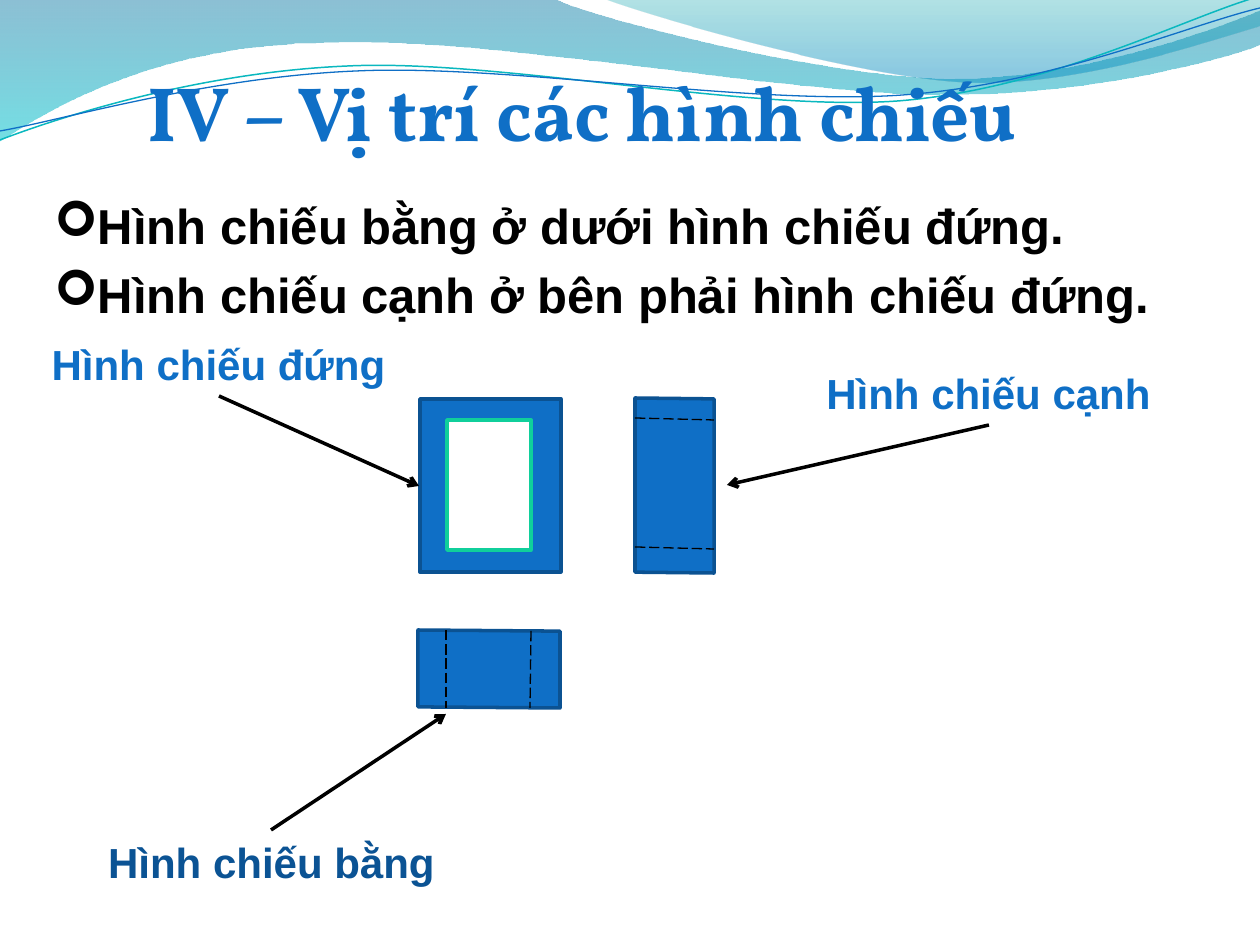
from dataclasses import dataclass
from math import cos, radians, sin

from lxml.etree import SubElement
from pptx import Presentation
from pptx.dml.color import RGBColor
from pptx.enum.dml import MSO_LINE
from pptx.enum.shapes import MSO_CONNECTOR, MSO_SHAPE
from pptx.enum.text import PP_ALIGN
from pptx.oxml.ns import qn
from pptx.util import Emu, Pt

EMU_PER_PX = 914400 / 126
WAVE_TILT = -2.7


@dataclass(frozen=True)
class Theme:
    blue: str = "0F6FC6"
    dark_blue: str = "0B5292"
    label_blue: str = "0B5394"
    green: str = "10CF9B"
    teal: str = "0AB8BF"
    black: str = "000000"
    white: str = "FFFFFF"
    title_font: str = "Vollkorn"
    body_font: str = "Arial"
    bullet_font: str = "Wingdings"
    title_size: int = 44
    body_size: int = 28
    label_size: int = 24


THEME = Theme()

# Outline steps: one point is a straight line, three points are a cubic curve.
RIBBON = [[(0, 0)], [(554, -1)],
          [(600, 21), (837, 79), (955, 79)], [(1075, 79), (1207, 33), (1260, 11)],
          [(1261, 45)],
          [(1239, 55), (1096, 96), (940, 95)], [(784, 95), (481, 35), (324, 43)],
          [(163, 45), (58, 104), (-1, 142)], [(0, 0)]]
CORNER = [[(604, -1)], [(641, 14), (859, 78), (969, 82)],
          [(1079, 86), (1211, 40), (1260, 26)], [(1260, 0)], [(604, -1)]]
TEAL_WAVE = [[(0, 140)], [(60, 117), (199, 72), (349, 66)],
             [(498, 59), (747, 112), (898, 101)], [(1050, 89), (1182, 19), (1257, -3)]]
BLUE_WAVE = [[(0, 131)], [(59, 121), (207, 77), (357, 71)],
             [(508, 64), (752, 106), (903, 95)], [(1053, 84), (1185, 26), (1260, 8)]]


def px(*lengths):
    return [Emu(round(length * EMU_PER_PX)) for length in lengths]


def add_outline(parent, box, steps, close=False, tilt=0):
    """Add a curved outline whose steps are where it shows after tilting."""
    left, top, width, height = box
    middle_x, middle_y = left + width / 2, top + height / 2
    turn = radians(-tilt)
    builder = parent.shapes.build_freeform(0, 0, scale=EMU_PER_PX)
    builder.add_line_segments([(width, height)], close=close)
    shape = builder.convert_to_shape()
    shape.left, shape.top, shape.width, shape.height = px(*box)
    shape.rotation = tilt
    shape.shadow.inherit = False
    outline = next(shape._element.iter(qn("a:path")))
    for child in list(outline):
        outline.remove(child)
    outline.set("w", str(shape.width))
    outline.set("h", str(shape.height))
    for index, points in enumerate(steps):
        kind = "a:moveTo" if index == 0 else "a:lnTo" if len(points) == 1 else "a:cubicBezTo"
        step = SubElement(outline, qn(kind))
        for point_x, point_y in points:
            x, y = point_x - middle_x, point_y - middle_y
            level_x, level_y = px(x * cos(turn) - y * sin(turn) + width / 2,
                                  x * sin(turn) + y * cos(turn) + height / 2)
            SubElement(step, qn("a:pt"), x=str(level_x), y=str(level_y))
    if close:
        SubElement(outline, qn("a:close"))
    return shape


def style_line(line, color, width):
    line.color.rgb = RGBColor.from_string(color)
    line.width = Pt(width)


def add_ribbon(parent, box, steps, stops):
    """Add a borderless area with a translucent gradient from top to bottom."""
    shape = add_outline(parent, box, steps, close=True)
    shape.line.fill.background()
    shape.fill.gradient()
    gradient = next(shape._element.iter(qn("a:gradFill")))
    for child in list(gradient):
        gradient.remove(child)
    stop_list = SubElement(gradient, qn("a:gsLst"))
    for position, color, opacity in stops:
        stop = SubElement(stop_list, qn("a:gs"), pos=str(position * 1000))
        value = SubElement(stop, qn("a:srgbClr"), val=color)
        SubElement(value, qn("a:alpha"), val=str(opacity * 1000))
    SubElement(gradient, qn("a:lin"), ang="5400000", scaled="0")


def add_wave(parent, box, steps, color, width):
    shape = add_outline(parent, box, steps, tilt=WAVE_TILT)
    shape.fill.background()
    style_line(shape.line, color, width)


def add_text(parent, box, lines, font, size, color, align=PP_ALIGN.LEFT):
    frame = parent.shapes.add_textbox(*px(*box)).text_frame
    frame.word_wrap = True
    frame.text = "\n".join(lines)
    for paragraph in frame.paragraphs:
        paragraph.alignment = align
        for run in paragraph.runs:
            run.font.name = font
            run.font.size = Pt(size)
            run.font.bold = True
            run.font.color.rgb = RGBColor.from_string(color)
    return frame


def add_bullets(frame, symbol, indent):
    for paragraph in frame.paragraphs:
        paragraph.space_before = Pt(6)
        properties = paragraph._p.get_or_add_pPr()
        properties.set("marL", str(indent))
        properties.set("indent", str(-indent))
        SubElement(properties, qn("a:buFont"), typeface=THEME.bullet_font)
        SubElement(properties, qn("a:buChar"), char=symbol)


def add_block(parent, box, fill, border, kind=MSO_SHAPE.RECTANGLE):
    shape = parent.shapes.add_shape(kind, *px(*box))
    shape.shadow.inherit = False
    shape.fill.solid()
    shape.fill.fore_color.rgb = RGBColor.from_string(fill)
    style_line(shape.line, border, 2)
    return shape


def add_line(parent, ends, width):
    connector = parent.shapes.add_connector(MSO_CONNECTOR.STRAIGHT, *px(*ends))
    style_line(connector.line, THEME.black, width)
    SubElement(connector._element.spPr, qn("a:effectLst"))
    return connector.line


def add_turned_view(slide, box, slant, hidden_edges):
    """Add a solid seen from one side, with its hidden edges dashed."""
    group = slide.shapes.add_group_shape()
    shape = add_block(group, box, THEME.blue, THEME.dark_blue, MSO_SHAPE.PARALLELOGRAM)
    shape.adjustments[0] = slant
    shape.rotation = 270
    for ends in hidden_edges:
        add_line(group, ends, 0.75).dash_style = MSO_LINE.LONG_DASH


def add_callout(slide, box, text, color, arrow_ends):
    group = slide.shapes.add_group_shape()
    add_text(group, box, [text], THEME.body_font, THEME.label_size, color, PP_ALIGN.CENTER)
    arrow = add_line(group, arrow_ends, 2)
    SubElement(arrow._get_or_add_ln(), qn("a:tailEnd"), type="arrow")


def add_header(slide):
    add_ribbon(slide, (-1, -1, 1263, 144), RIBBON,
               [(0, "0074A1", 45), (100, "00C6CF", 55)])
    add_ribbon(slide, (604, -1, 656, 88), CORNER,
               [(0, "00A1A9", 30), (80, "008BBF", 45)])
    add_wave(slide, (-3, 28, 1263, 89), TEAL_WAVE, THEME.teal, 0.85)
    add_wave(slide, (-3, 38, 1264, 73), BLUE_WAVE, THEME.blue, 0.75)


def add_projections(slide):
    front = slide.shapes.add_group_shape()
    add_block(front, (420, 399, 141, 173), THEME.blue, THEME.dark_blue)
    add_block(front, (447, 420, 84, 130), THEME.white, THEME.green)
    add_turned_view(slide, (587, 446, 175, 79), 0.011,
                    [(635, 547, 714, 549), (635, 418, 714, 420)])
    add_turned_view(slide, (450, 598, 78, 142), 0.014,
                    [(446, 630, 446, 708), (531, 631, 530, 708)])


def main():
    presentation = Presentation()
    presentation.slide_width, presentation.slide_height = px(1260, 945)
    slide = presentation.slides.add_slide(presentation.slide_layouts[6])
    add_header(slide)
    rules = add_text(slide, (42, 189, 1207, 142),
                     ["Hình chiếu bằng ở dưới hình chiếu đứng.",
                      "Hình chiếu cạnh ở bên phải hình chiếu đứng."],
                     THEME.body_font, THEME.body_size, THEME.black)
    add_bullets(rules, "➢", px(39)[0])
    add_text(slide, (135, 58, 1135, 106), ["IV – Vị trí các hình chiếu"],
             THEME.title_font, THEME.title_size, THEME.blue)
    add_projections(slide)
    add_callout(slide, (11, 332, 415, 63), "Hình chiếu đứng", THEME.blue,
                (219, 396, 419, 486))
    add_callout(slide, (64, 830, 415, 63), "Hình chiếu bằng", THEME.label_blue,
                (271, 830, 446, 714))
    add_callout(slide, (797, 361, 383, 63), "Hình chiếu cạnh", THEME.blue,
                (989, 425, 727, 485))
    presentation.save("out.pptx")


if __name__ == "__main__":
    main()
